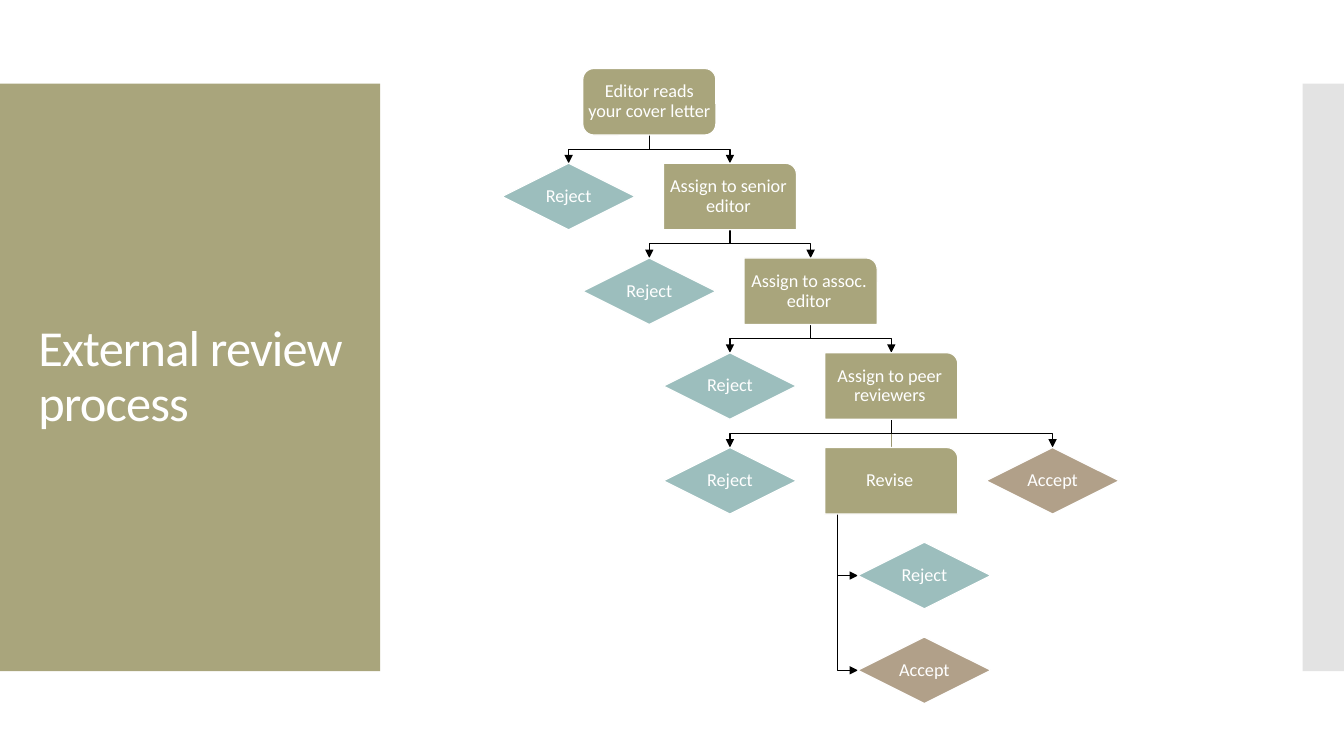
from lxml import etree
from pptx import Presentation
from pptx.dml.color import RGBColor
from pptx.enum.shapes import MSO_SHAPE
from pptx.enum.text import MSO_ANCHOR, PP_ALIGN
from pptx.oxml.ns import qn
from pptx.util import Inches, Pt

RECTANGLE = MSO_SHAPE.RECTANGLE
START = MSO_SHAPE.ROUNDED_RECTANGLE
STEP = MSO_SHAPE.ROUND_1_RECTANGLE
DECISION = MSO_SHAPE.FLOWCHART_DECISION
MIDDLE = MSO_ANCHOR.MIDDLE
LEFT = PP_ALIGN.LEFT
CENTER = PP_ALIGN.CENTER

COLORS = {
    "olive": "A9A57C",
    "teal": "9CBEBD",
    "brown": "B1A089",
    "gray": "C8C8C8",
    "stem": "999671",
    "black": "000000",
    "white": "FFFFFF",
}
FONT = "Calibri"
NODE_WIDTH, NODE_HEIGHT = 1.32, 0.66
ROW_STEP, COLUMN_STEP = 0.94, 0.8
FIRST_TOP, FIRST_CENTER = 0.68, 6.44
LINE_WIDTH = 0.85


def format_text(box, align, size, inset):
    frame = box.text_frame
    frame.word_wrap = True
    frame.vertical_anchor = MIDDLE
    frame.margin_left = frame.margin_right = Inches(inset[0])
    frame.margin_top = frame.margin_bottom = Inches(inset[1])
    paragraph = frame.paragraphs[0]
    paragraph.alignment = align
    paragraph.line_spacing = 0.9
    span = paragraph.runs[0]
    span.font.name = FONT
    span.font.size = Pt(size)
    span.font.color.rgb = RGBColor.from_string(COLORS["white"])
    return span


def add_route(page, points, color, arrow):
    points = [(Inches(x), Inches(y)) for x, y in points]
    builder = page.shapes.build_freeform(*points[0])
    builder.add_line_segments(points[1:], close=False)
    route = builder.convert_to_shape()
    route.shadow.inherit = False
    route.fill.background()
    route.line.color.rgb = RGBColor.from_string(COLORS[color])
    route.line.width = Pt(LINE_WIDTH)
    if arrow:
        outline = route.line._get_or_add_ln()
        etree.SubElement(outline, qn("a:tailEnd"), type="triangle")


deck = Presentation()
deck.slide_width = Inches(13.33)
deck.slide_height = Inches(7.5)
page = deck.slides.add_slide(deck.slide_layouts[5])

title = page.shapes.title
title.left, title.top = Inches(0.28), Inches(1.23)
title.width, title.height = Inches(3.22), Inches(5.03)
title.text_frame.text = "External review process"
title_span = format_text(title, LEFT, 36, (0.1, 0.05))
title_span.font._element.set("spc", "-60")

for left, width, color in [(0, 3.77, "olive"), (12.92, 0.41, "gray")]:
    panel = page.shapes.add_shape(
        RECTANGLE, Inches(left), Inches(0.83), Inches(width), Inches(5.83)
    )
    panel.shadow.inherit = False
    panel.fill.solid()
    panel.fill.fore_color.rgb = RGBColor.from_string(COLORS[color])
    panel.line.fill.background()
    title.element.addprevious(panel.element)
    if color == "gray":
        tint = panel.fill._xPr.find(qn("a:solidFill"))[0]
        etree.SubElement(tint, qn("a:alpha"), val="50000")

branches = [(3, 3, 5), (3, 3, 3), (3, 3, 1), (2, 2, 3), (2, 2, 1),
            (1, 1, 2), (1, 1, 0), (0, 0, 1), (0, 0, -1)]
for row, parent, child in branches:
    start_x = FIRST_CENTER + parent * COLUMN_STEP
    end_x = FIRST_CENTER + child * COLUMN_STEP
    start_y = FIRST_TOP + row * ROW_STEP + NODE_HEIGHT
    end_y = FIRST_TOP + (row + 1) * ROW_STEP
    if parent == child:
        add_route(page, [(start_x, start_y), (end_x, end_y)], "stem", False)
    else:
        bend_y = (start_y + end_y) / 2
        add_route(page, [(start_x, start_y), (start_x, bend_y),
                         (end_x, bend_y), (end_x, end_y)], "black", True)

for row in (6, 5):
    center_y = FIRST_TOP + row * ROW_STEP + NODE_HEIGHT / 2
    add_route(page, [(8.31, 5.1), (8.31, center_y), (8.51, center_y)],
              "black", True)

nodes = [
    ("Editor reads your cover letter", START, "olive", 0, 0),
    ("Reject", DECISION, "teal", 1, -1),
    ("Assign to senior editor", STEP, "olive", 1, 1),
    ("Reject", DECISION, "teal", 2, 0),
    ("Assign to assoc. editor", STEP, "olive", 2, 2),
    ("Reject", DECISION, "teal", 3, 1),
    ("Assign to peer reviewers", STEP, "olive", 3, 3),
    ("Reject", DECISION, "teal", 4, 1),
    ("Revise", STEP, "olive", 4, 3),
    ("Reject", DECISION, "teal", 5, 3.41),
    ("Accept", DECISION, "brown", 6, 3.41),
    ("Accept", DECISION, "brown", 4, 5),
]
for label, kind, color, row, column in nodes:
    node = page.shapes.add_shape(
        kind,
        Inches(FIRST_CENTER + column * COLUMN_STEP - NODE_WIDTH / 2),
        Inches(FIRST_TOP + row * ROW_STEP),
        Inches(NODE_WIDTH),
        Inches(NODE_HEIGHT),
    )
    node.shadow.inherit = False
    node.fill.solid()
    node.fill.fore_color.rgb = RGBColor.from_string(COLORS[color])
    node.line.color.rgb = RGBColor.from_string(COLORS["white"])
    node.line.width = Pt(LINE_WIDTH)
    node.text_frame.text = label
    format_text(node, CENTER, 13, (0.01, 0.01))

deck.save("out.pptx")
